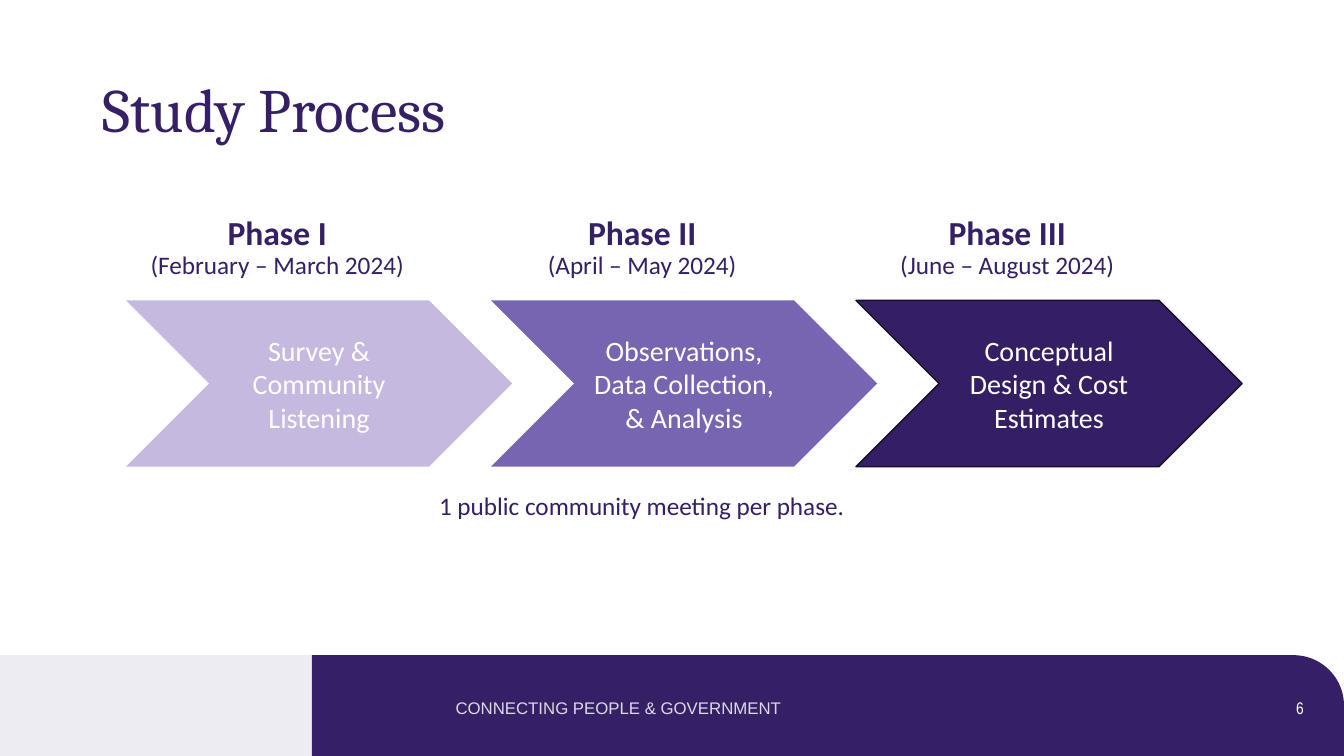
from pptx import Presentation
from pptx import util as u
from pptx.dml.color import RGBColor
from pptx.enum import shapes, text

WIDE, HIGH = 13.33, 7.5
LEFT, STEP = 1.25, 3.62  # phase columns
FOOT = 6.5               # top of the footer band
SPLIT = 3.09             # where the footer changes colour

HUES = {
    "ink": "351F65", "white": "FFFFFF", "pale": "EEECF3", "mist": "DDDAE8",
    "lilac": "C6B9E0", "violet": "7865B2", "deep": "341F65", "edge": "170E2C",
}
PHASES = [
    ("Phase I", "(February – March 2024)",
     "Survey & Community Listening", "lilac", None),
    ("Phase II", "(April – May 2024)",
     "Observations,\vData Collection,\v& Analysis", "violet", None),
    ("Phase III", "(June – August 2024)",
     "Conceptual Design & Cost Estimates", "deep", "edge"),
]
FORMS = shapes.MSO_SHAPE
ALIGN = text.PP_ALIGN
MID = text.MSO_ANCHOR.MIDDLE


def rgb(hue):
    return RGBColor.from_string(HUES[hue])


def place(*box):
    return [u.Inches(n) for n in box]


def style(para, size, hue, face="Calibri", align=ALIGN.LEFT):
    para.alignment = align
    font = para.font
    font.size, font.name = u.Pt(size), face
    font.color.rgb = rgb(hue)


def form(slide, kind, box, fill, edge=None):
    """Add a flat preset shape, with an outline only if edge is given."""
    shape = slide.shapes.add_shape(kind, *place(*box))
    shape.shadow.inherit = False
    shape.fill.solid()
    shape.fill.fore_color.rgb = rgb(fill)
    if edge:
        shape.line.color.rgb = rgb(edge)
        shape.line.width = u.Pt(1)
    else:
        shape.line.fill.background()
    return shape


def label(slide, box, words, size, hue, anchor=text.MSO_ANCHOR.TOP, **look):
    """Add a wrapped one-paragraph text box and return its paragraph."""
    frame = slide.shapes.add_textbox(*place(*box)).text_frame
    frame.word_wrap = True
    frame.vertical_anchor = anchor
    para = frame.paragraphs[0]
    para.text = words
    style(para, size, hue, **look)
    return para


def phase(slide, col, name, dates, task, fill, edge):
    x = LEFT + col * STEP
    # Heading: bold name above the dates
    head = label(slide, (x, 2.1, 3, 0.82), f"{name}\v{dates}", 18, "ink",
                 align=ALIGN.CENTER)
    head.line_spacing = 0.9
    title = head.runs[0].font
    title.size, title.bold = u.Pt(24), True
    # Arrow with the task
    arrow = form(slide, FORMS.CHEVRON, (x, 2.98, 3.83, 1.65), fill, edge)
    frame = arrow.text_frame
    frame.word_wrap = True
    frame.vertical_anchor = MID
    frame.text = task
    style(frame.paragraphs[0], 20, "white", align=ALIGN.CENTER)


def footer(slide):
    deep = HIGH - FOOT
    band = form(slide, FORMS.ROUND_1_RECTANGLE,
                (SPLIT, FOOT, WIDE - SPLIT, deep), "ink")
    band.adjustments[0] = 0.5
    form(slide, FORMS.RECTANGLE, (0, FOOT, SPLIT, deep), "pale")
    label(slide, (4.42, 6.82, 4.5, 0.4), "CONNECTING PEOPLE & GOVERNMENT",
          12, "mist", MID, face="Arial")
    label(slide, (12.42, 6.82, 0.61, 0.4), "6", 12, "white", MID,
          face="Arial Narrow", align=ALIGN.RIGHT)


def main():
    deck = Presentation()
    deck.slide_width, deck.slide_height = place(WIDE, HIGH)
    slide = deck.slides.add_slide(deck.slide_layouts[6])

    footer(slide)
    # Title
    title = label(slide, (0.92, 0.39, 11.5, 1.45), "Study Process",
                  44, "ink", MID, face="Cambria")
    title.line_spacing = 0.9
    # Phases, left to right
    for col, facts in enumerate(PHASES):
        phase(slide, col, *facts)
    # Note under the arrows
    label(slide, (2.97, 4.82, 6.79, 0.4),
          "1 public community meeting per phase.", 18, "ink",
          align=ALIGN.CENTER)
    deck.save("out.pptx")


if __name__ == "__main__":
    main()
